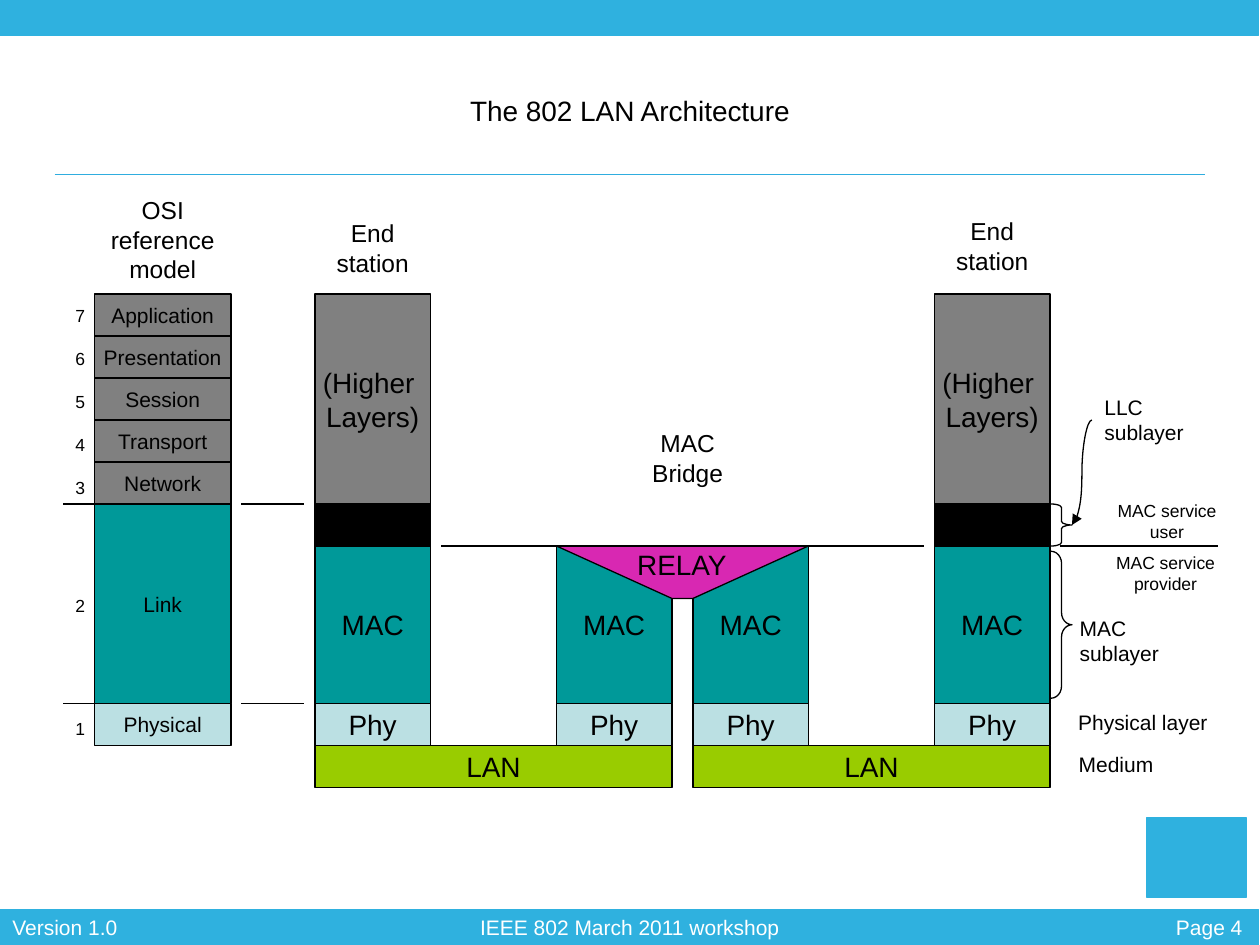
import lxml.etree
import pptx
import pptx.dml.color
import pptx.enum.shapes
import pptx.enum.text
import pptx.oxml.ns
import pptx.util

KIND = pptx.enum.shapes.MSO_SHAPE
LINK = pptx.enum.shapes.MSO_CONNECTOR
ALIGN = pptx.enum.text.PP_ALIGN
MID = pptx.enum.text.MSO_ANCHOR.MIDDLE
TOP = pptx.enum.text.MSO_ANCHOR.TOP

# The grid has twelve units to the inch
UNIT = pptx.util.Inches(1) / 12
WIDE, HIGH = 120, 90

SKY, EDGE, BLACK, WHITE = "2FB1DF", "2FADDF", "000000", "FFFFFF"
GREY, TEAL, PALE, LIME, PINK = "808080", "009999", "BBE0E3", "99CC00", "D828B2"

# Left edges of the stacks, and top edges of the layers
ENDS, PORTS, STACK = (30, 89), (53, 66), 11
OSI_X, OSI_W = 9, 13
APP, LLC, MAC, PHY, LAN, ROW = 28, 48, 52, 67, 71, 4


def ink(code):
    return pptx.dml.color.RGBColor.from_string(code)


def grid(*units):
    return [pptx.util.Emu(round(n * UNIT)) for n in units]


def put(item, form):
    for name, value in form.items():
        setattr(item, name, value)


def write(shape, text, size, color=BLACK, align=ALIGN.CENTER, anchor=TOP, wrap=True):
    frame = shape.text_frame
    put(frame, {"text": text, "word_wrap": wrap, "vertical_anchor": anchor})
    for para in frame.paragraphs:
        para.alignment = align
        for run in para.runs:
            put(run.font, {"name": "Arial", "size": pptx.util.Pt(size)})
            run.font.color.rgb = ink(color)
    return frame


def label(slide, place, text, size, **form):
    return write(slide.shapes.add_textbox(*grid(*place)), text, size, **form)


def paint(shape, fill, edge):
    shape.shadow.inherit = False
    if fill:
        shape.fill.solid()
        shape.fill.fore_color.rgb = ink(fill)
    else:
        shape.fill.background()
    shape.line.color.rgb = ink(edge)
    shape.line.width = pptx.util.Pt(0.75)


def box(slide, place, fill, text="", size=16, edge=BLACK):
    shape = slide.shapes.add_shape(KIND.RECTANGLE, *grid(*place))
    paint(shape, fill, edge)
    if text:
        write(shape, text, size, anchor=MID, wrap=False)


def brace(slide, place, bend):
    shape = slide.shapes.add_shape(KIND.RIGHT_BRACE, *grid(*place))
    paint(shape, None, BLACK)
    shape.adjustments[0] = bend


def line(slide, ends, color=BLACK, kind=LINK.STRAIGHT, arrow=False):
    link = slide.shapes.add_connector(kind, *grid(*ends))
    link.line.color.rgb = ink(color)
    link.line.width = pptx.util.Pt(0.75)
    name = pptx.oxml.ns.qn
    if arrow:
        stroke = link.line._get_or_add_ln()
        lxml.etree.SubElement(stroke, name("a:tailEnd"), type="triangle")
    lxml.etree.SubElement(link._element.spPr, name("a:effectLst"))


def frame(slide):
    # Bars, rule, footer and badge
    for top in (86.64, 0):
        box(slide, (0, top, 119.88, 3.36), SKY, edge=SKY)
    line(slide, (5.2, 16.65, 114.8, 16.65), EDGE)
    foot = 86.52
    label(slide, (104.4, foot, 15.12, 3.6), "Page 4", 12, color=WHITE, align=ALIGN.RIGHT)
    label(slide, (0, foot, 12.5, 3.6), "Version 1.0", 12, color=WHITE,
          align=ALIGN.LEFT, wrap=False)
    label(slide, (0, foot, WIDE, 3.6), "IEEE 802 March 2011 workshop", 12, color=WHITE)
    box(slide, (109.2, 77.9, 9.5, 7.55), SKY, edge=SKY)
    label(slide, (6, 5.28, 108, 10.44), "The 802 LAN Architecture", 16, anchor=MID)


def model(slide):
    # OSI layers with their numbers
    names = ("Application", "Presentation", "Session", "Transport", "Network")
    for i, name in enumerate(names):
        box(slide, (OSI_X, APP + i * ROW, OSI_W, ROW), GREY, name, 12)
    box(slide, (OSI_X, LLC, OSI_W, PHY - LLC), TEAL, "Link", 12)
    box(slide, (OSI_X, PHY, OSI_W, ROW), PALE, "Physical", 12)
    label(slide, (OSI_X, 18, OSI_W, 9.6), "OSI reference model", 14)
    text = label(slide, (6, 28.45, 3.7, 42), "7\n6\n5\n4\n3\n2\n1", 10, align=ALIGN.LEFT)
    gaps = (0, 12.6, 12.6, 12.6, 12.6, 55.4, 58.2)
    for para, gap in zip(text.paragraphs, gaps):
        para.space_before = pptx.util.Pt(gap)


def stacks(slide):
    # End stations, bridge ports and the two LANs
    for x in ENDS + PORTS:
        box(slide, (x, PHY, STACK, ROW), PALE, "Phy")
        box(slide, (x, MAC, STACK, PHY - MAC), TEAL, "MAC")
    for x, top in zip(ENDS, (20.2, 20)):
        box(slide, (x, LLC, STACK, ROW), BLACK)
        box(slide, (x, APP, STACK, LLC - APP), GREY, "(Higher \nLayers)")
        label(slide, (x - 1, top, 13, 6.84), "End station", 14)
    for x in (30, 66):
        box(slide, (x, LAN, 34, ROW), LIME, "LAN")

    # Relay across both ports
    pen = slide.shapes.build_freeform(53, MAC, scale=UNIT)
    pen.add_line_segments([(77, MAC), (66, 57), (64, 57)], close=True)
    paint(pen.convert_to_shape(), PINK, BLACK)
    label(slide, (59.5, 51.6, 11.2, 4.4), "RELAY", 16, align=ALIGN.LEFT)
    label(slide, (59, 40.2, 13, 6.84), "MAC Bridge", 14)


def notes(slide):
    # Layer boundaries
    for y in (LLC, PHY):
        for x, end in ((6, 10), (23, 29)):
            line(slide, (x, y, end, y))
    for x, end in ((42, 88), (101, 116)):
        line(slide, (x, MAC, end, MAC))

    # Sublayers on the right
    brace(slide, (100.1, 52.5, 2, 14), 0.58)
    brace(slide, (100.1, LLC, 2, ROW), 0.17)
    line(slide, (104, 40, 102.1, 50), kind=LINK.CURVE, arrow=True)
    for place, text in (
        ((101.64, 58, 11, 6), "MAC sublayer"),
        ((101.5, PHY, 16, 3.6), "Physical layer"),
        ((104, 37, 10, 6), "LLC sublayer"),
    ):
        label(slide, place, text, 12, align=ALIGN.LEFT)
    label(slide, (100.8, LAN, 11, 3.6), "Medium", 12)
    label(slide, (104.64, 47, 13, 5.2), "MAC service\nuser", 10)
    label(slide, (104, MAC, 14, 5.2), "MAC service\vprovider", 10)


def main():
    deck = pptx.Presentation()
    deck.slide_width, deck.slide_height = grid(WIDE, HIGH)
    slide = deck.slides.add_slide(deck.slide_layouts[6])
    for part in (frame, model, stacks, notes):
        part(slide)
    deck.save("out.pptx")


if __name__ == "__main__":
    main()
